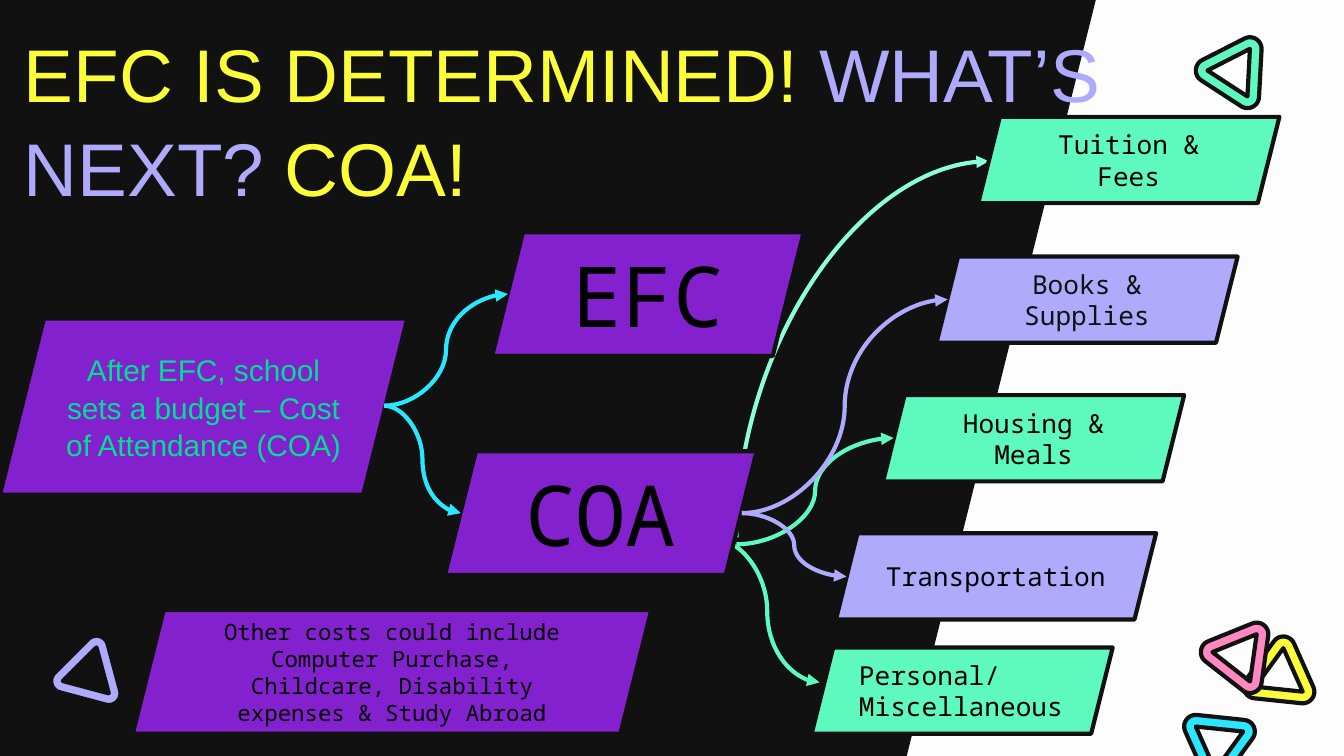
import math

import pptx
import pptx.dml.color
import pptx.enum.shapes
import pptx.enum.text
import pptx.oxml.ns
import pptx.util
from lxml import etree

Cm, Pt = pptx.util.Cm, pptx.util.Pt
MSO_SHAPE = pptx.enum.shapes.MSO_SHAPE
MSO_CONNECTOR = pptx.enum.shapes.MSO_CONNECTOR
PP_ALIGN = pptx.enum.text.PP_ALIGN
MSO_ANCHOR = pptx.enum.text.MSO_ANCHOR
qn = pptx.oxml.ns.qn

COLORS = {
    "paper": "FDFDFD", "ink": "111111", "black": "000000",
    "yellow": "FAFD37", "lilac": "B0AAFC", "mint": "5DF9BE",
    "pale": "8CFFD8", "cyan": "29E7FF", "pink": "FF88C0",
    "purple": "8421CE", "green": "00DF93",
}
MONO, SANS = "Noto Sans Mono", "Arial"
SANS_SPACING = 1.05

TITLE = [("EFC IS DETERMINED! ", "yellow"), ("WHAT’S NEXT? ", "lilac"), ("COA!", "yellow")]
TITLE_BOX = (0.2, 1.02, 21.41, 2.41)

BACKDROP = [
    (MSO_SHAPE.PARALLELOGRAM, (5.59, -0.08, 15.14, 14.53)),
    (MSO_SHAPE.RECTANGLE, (-0.18, -0.08, 9.8, 14.55)),
]
TRIANGLES = [
    (24.2, 12.77, -84, "yellow"),
    (23.02, 14.04, 96, "cyan"),
    (23.43, 12.4, -52, "pink"),
    (23.34, 1.36, -57, "mint"),
    (1.69, 12.74, -75, "lilac"),
]
TRIANGLE_RADIUS, TRIANGLE_BAND = 0.52, 0.22

COST_W, COST_H = 5.69, 1.63
COSTS = [
    ("Tuition & Fees", 18.49, 2.21, COST_W, "mint", "black", PP_ALIGN.CENTER),
    ("Books & Supplies", 17.7, 4.85, COST_W, "lilac", "ink", PP_ALIGN.CENTER),
    ("Housing & Meals", 16.69, 7.47, COST_W, "mint", "black", PP_ALIGN.CENTER),
    ("Transportation", 15.8, 10.08, 6.05, "lilac", "black", PP_ALIGN.CENTER),
    ("Personal/ Miscellaneous", 15.34, 12.24, COST_W, "mint", "black", PP_ALIGN.LEFT),
]
STEPS = [
    ("COA", (8.41, 8.53, 5.89, 2.34), 45, MONO, "black"),
    ("EFC", (9.3, 4.39, 5.89, 2.34), 45, MONO, "black"),
    ("After EFC, school sets a budget – Cost of Attendance (COA)",
     (0, 6.02, 7.7, 3.33), 16, SANS, "green"),
    ("Other costs could include Computer Purchase, Childcare, Disability "
     "expenses & Study Abroad", (2.51, 11.53, 9.8, 2.34), 12, MONO, "black"),
]

BUDGET, COA = (7.26, 7.67), (14.02, 9.7)
TUITION_LINK = ((13.92, 10.16), (18.69, 3.05), "pale")
PERSONAL_LINK = ((13.51, 10.19), (15.49, 12.9), "mint")
FRONT_LINKS = [
    (BUDGET, (9.6, 5.56), "cyan"),
    (BUDGET, (8.71, 9.7), "cyan"),
    ((13.92, 10.29), (16.89, 8.28), "mint"),
    (COA, (16, 10.9), "lilac"),
    (COA, (17.91, 5.66), "lilac"),
]


def rgb(name):
    return pptx.dml.color.RGBColor.from_string(COLORS[name])


def paint(s, fill, outlined=True):
    s.shadow.inherit = False
    s.fill.solid()
    s.fill.fore_color.rgb = rgb(fill)
    if outlined:
        s.line.color.rgb = rgb("ink")
        s.line.width = Pt(2.25)
    else:
        s.line.fill.background()


def set_frame(tf):
    tf.word_wrap = True
    tf.auto_size = pptx.enum.text.MSO_AUTO_SIZE.NONE
    tf.vertical_anchor = MSO_ANCHOR.MIDDLE
    tf.margin_left = tf.margin_right = tf.margin_top = tf.margin_bottom = Cm(0.25)


def add_box(shapes, text, box, fill, size, font, color, align=PP_ALIGN.CENTER):
    s = shapes.add_shape(MSO_SHAPE.PARALLELOGRAM, *map(Cm, box))
    paint(s, fill)
    set_frame(s.text_frame)
    p = s.text_frame.paragraphs[0]
    p.text = text
    p.alignment = align
    if font == SANS:
        p.line_spacing = SANS_SPACING
    p.font.name, p.font.size = font, Pt(size)
    p.font.color.rgb = rgb(color)


def add_triangle(shapes, x, y, angle, color):
    def around(cx, cy, radius, degrees):
        a = math.radians(degrees)
        return Cm(cx + radius * math.cos(a)), Cm(cy + radius * math.sin(a))

    turns = [angle + 120 * i for i in range(3)]
    inner = [around(x, y, TRIANGLE_RADIUS, t) for t in turns]
    outer = [around(vx.cm, vy.cm, TRIANGLE_BAND, t + step)
             for (vx, vy), t in zip(inner, turns) for step in range(-60, 61, 10)]
    builder = shapes.build_freeform(*outer[0])
    builder.add_line_segments(outer[1:])
    builder.move_to(*inner[0])
    builder.add_line_segments(inner[1:])
    paint(builder.convert_to_shape(), color)


def add_link(shapes, start, end, color):
    c = shapes.add_connector(MSO_CONNECTOR.CURVE, *map(Cm, start + end))
    c.line.color.rgb = rgb(color)
    c.line.width = Pt(2.25)
    etree.SubElement(c.line._get_or_add_ln(), qn("a:tailEnd"), type="triangle")
    etree.SubElement(c._element.spPr, qn("a:effectLst"))
    return c


def add_quarter_link(shapes, start, end, color):
    (x1, y1), (x2, y2) = start, end
    cx, cy = (x1 + x2) / 2, (y1 + y2) / 2
    dx, dy = abs(y2 - y1) / 2, abs(x2 - x1) / 2
    c = add_link(shapes, (cx + dx, cy + dy), (cx - dx, cy - dy), color)
    c._element.spPr.find(qn("a:xfrm")).set("rot", "5400000")
    c._element.spPr.find(qn("a:prstGeom")).set("prst", "curvedConnector2")


def main():
    prs = pptx.Presentation()
    prs.slide_width, prs.slide_height = Cm(25.4), Cm(14.29)
    slide = prs.slides.add_slide(prs.slide_layouts[5])
    slide.background.fill.solid()
    slide.background.fill.fore_color.rgb = rgb("paper")
    shapes = slide.shapes

    for kind, box in BACKDROP:
        paint(shapes.add_shape(kind, *map(Cm, box)), "ink", outlined=False)
    for triangle in TRIANGLES:
        add_triangle(shapes, *triangle)

    title = shapes.title
    title.left, title.top, title.width, title.height = map(Cm, TITLE_BOX)
    set_frame(title.text_frame)
    p = title.text_frame.paragraphs[0]
    p.alignment = PP_ALIGN.LEFT
    p.line_spacing = SANS_SPACING
    p.font.name, p.font.size = SANS, Pt(40)
    for text, color in TITLE:
        r = p.add_run()
        r.text = text
        r.font.color.rgb = rgb(color)
    shapes._spTree.append(title._element)

    add_quarter_link(shapes, *TUITION_LINK)
    add_link(shapes, *PERSONAL_LINK)
    for text, x, y, w, fill, color, align in COSTS:
        add_box(shapes, text, (x, y, w, COST_H), fill, 14, MONO, color, align)
    for text, box, size, font, color in STEPS:
        add_box(shapes, text, box, "purple", size, font, color)
    for link in FRONT_LINKS:
        add_link(shapes, *link)

    prs.save("out.pptx")


if __name__ == "__main__":
    main()
